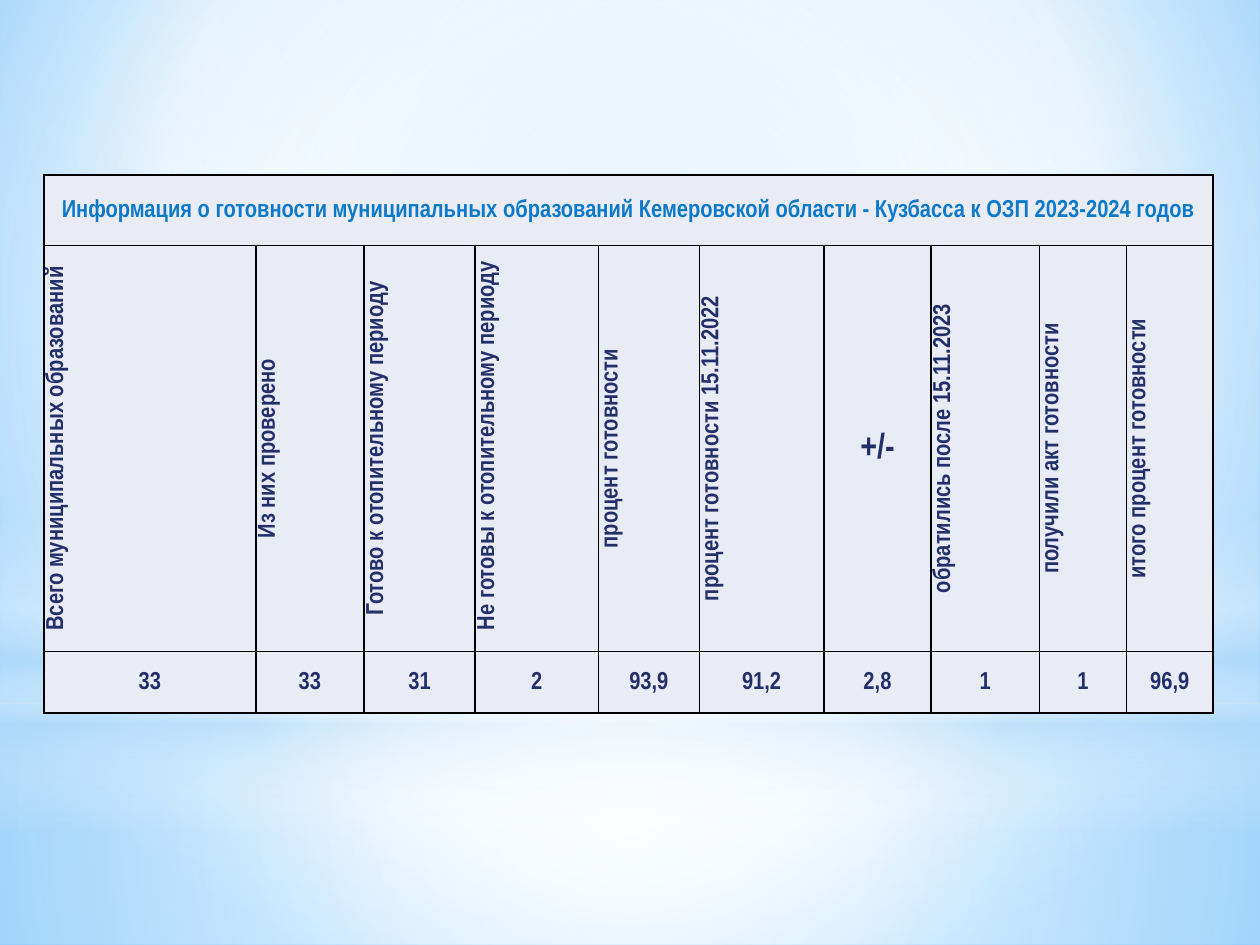
from lxml import etree
from pptx import Presentation
from pptx.dml.color import RGBColor
from pptx.enum.shapes import MSO_SHAPE
from pptx.enum.text import MSO_ANCHOR, PP_ALIGN
from pptx.oxml import parse_xml
from pptx.oxml.ns import nsdecls
from pptx.util import Inches, Pt

RECT, OVAL = MSO_SHAPE.RECTANGLE, MSO_SHAPE.OVAL
MIDDLE, CENTER = MSO_ANCHOR.MIDDLE, PP_ALIGN.CENTER
WHITE, SKY, NAVY, BLUE, PALE = "FFFFFF", "B4DCFA", "21306A", "0D79CA", "E9EBF5"

TITLE = ("Информация о готовности муниципальных образований "
         "Кемеровской области - Кузбасса к ОЗП 2023-2024 годов")
# Column width, heading, value
COLS = [
    (1.68, "Всего муниципальных образований", "33"),
    (0.86, "Из них проверено", "33"),
    (0.88, "Готово к отопительному периоду", "31"),
    (0.98, " Не готовы к отопительному периоду", "2"),
    (0.8, "процент готовности", "93,9"),
    (0.99, "процент готовности 15.11.2022", "91,2"),
    (0.85, "+/-", "2,8"),
    (0.86, "обратились после 15.11.2023", "1"),
    (0.69, "получили акт готовности", "1"),
    (0.69, "итого процент готовности", "96,9"),
]
ROWS = [0.56, 3.22, 0.49]


def color(code):
    return RGBColor.from_string(code)


def blend(owner, stops, focus=None):
    """Swap a solid fill for a gradient: round about focus, else downward."""
    marks = "".join(
        f'<a:gs pos="{pos * 1000}"><a:srgbClr val="{code}">'
        f'<a:alpha val="{alpha * 1000}"/></a:srgbClr></a:gs>'
        for pos, code, alpha in stops)
    if focus:
        sides = " ".join(f'{side}="{part * 1000}"'
                         for side, part in zip("ltrb", focus))
        way = f'<a:path path="circle"><a:fillToRect {sides}/></a:path>'
    else:
        way = '<a:lin ang="5400000" scaled="0"/>'
    grad = parse_xml(f'<a:gradFill rotWithShape="1" {nsdecls("a")}>'
                     f'<a:gsLst>{marks}</a:gsLst>{way}</a:gradFill>')
    solid = owner.xpath(".//a:solidFill")[0]
    solid.getparent().replace(solid, grad)


def glow(slide, kind, box, stops, focus=None):
    shape = slide.shapes.add_shape(kind, *map(Inches, box))
    shape.shadow.inherit = False
    shape.line.fill.background()
    shape.fill.solid()
    shape.fill.fore_color.rgb = color(WHITE)
    blend(shape.element, stops, focus)


def backdrop(slide):
    fill = slide.background.fill
    fill.solid()
    fill.fore_color.rgb = color(WHITE)
    blend(slide.element,
          [(0, "9ED5FF", 100), (60, WHITE, 100), (100, "5BB9FF", 100)],
          (20, 10, 20, 60))
    mid = (50, 50, 50, 50)
    # Floor and wall
    glow(slide, RECT, (0, 5.58, 10, 1.92),
         [(0, WHITE, 91), (37, WHITE, 76), (100, SKY, 79)], mid)
    glow(slide, RECT, (0, 0, 10, 5.58),
         [(0, WHITE, 89), (48, WHITE, 62), (100, SKY, 79)], mid)
    # Horizon band
    glow(slide, RECT, (0, 4.12, 10, 2.5),
         [(0, WHITE, 0), (29, WHITE, 30), (45, SKY, 40),
          (55, WHITE, 26), (65, SKY, 60), (100, WHITE, 0)])
    # Light spot
    glow(slide, OVAL, (0, 1.75, 10, 5.58),
         [(0, WHITE, 100), (56, WHITE, 0)], mid)


def write(cell, text, size=14, ink=NAVY, turn=False):
    para = cell.text_frame.paragraphs[0]
    para.alignment = CENTER
    run = para.add_run()
    run.text = text
    run.font.name = "Arial Narrow"
    run.font.size = Pt(size)
    run.font.bold = True
    run.font.color.rgb = color(ink)
    if turn:
        cell._tc.get_or_add_tcPr().set("vert", "vert270")


def frame(cell):
    """Give a cell its fill, margins and black borders."""
    cell.vertical_anchor = MIDDLE
    cell.margin_left = cell.margin_right = cell.margin_top = Inches(0.01)
    cell.margin_bottom = 0
    cell.fill.solid()
    cell.fill.fore_color.rgb = color(PALE)
    props = cell._tc.get_or_add_tcPr()
    for spot, side in enumerate("LRTB"):
        props.insert(spot, etree.fromstring(
            f'<a:ln{side} w="12700" {nsdecls("a")}><a:solidFill>'
            f'<a:srgbClr val="000000"/></a:solidFill></a:ln{side}>'))


def report(slide, box):
    table = slide.shapes.add_table(
        len(ROWS), len(COLS), *map(Inches, box)).table
    table.first_row = table.horz_banding = False
    for row, height in zip(table.rows, ROWS):
        row.height = Inches(height)
    for cell in table.iter_cells():
        frame(cell)
    # Title row
    table.cell(0, 0).merge(table.cell(0, len(COLS) - 1))
    write(table.cell(0, 0), TITLE, ink=BLUE)
    # Headings and values
    for col, (width, head, value) in enumerate(COLS):
        table.columns[col].width = Inches(width)
        sign = head == "+/-"
        write(table.cell(1, col), head, size=20 if sign else 14, turn=not sign)
        write(table.cell(2, col), value)


def main():
    deck = Presentation()
    deck.slide_width, deck.slide_height = Inches(10), Inches(7.5)
    slide = deck.slides.add_slide(deck.slide_layouts[6])
    backdrop(slide)
    report(slide, (0.35, 1.39, 9.29, 4.27))
    deck.save("out.pptx")


if __name__ == "__main__":
    main()
